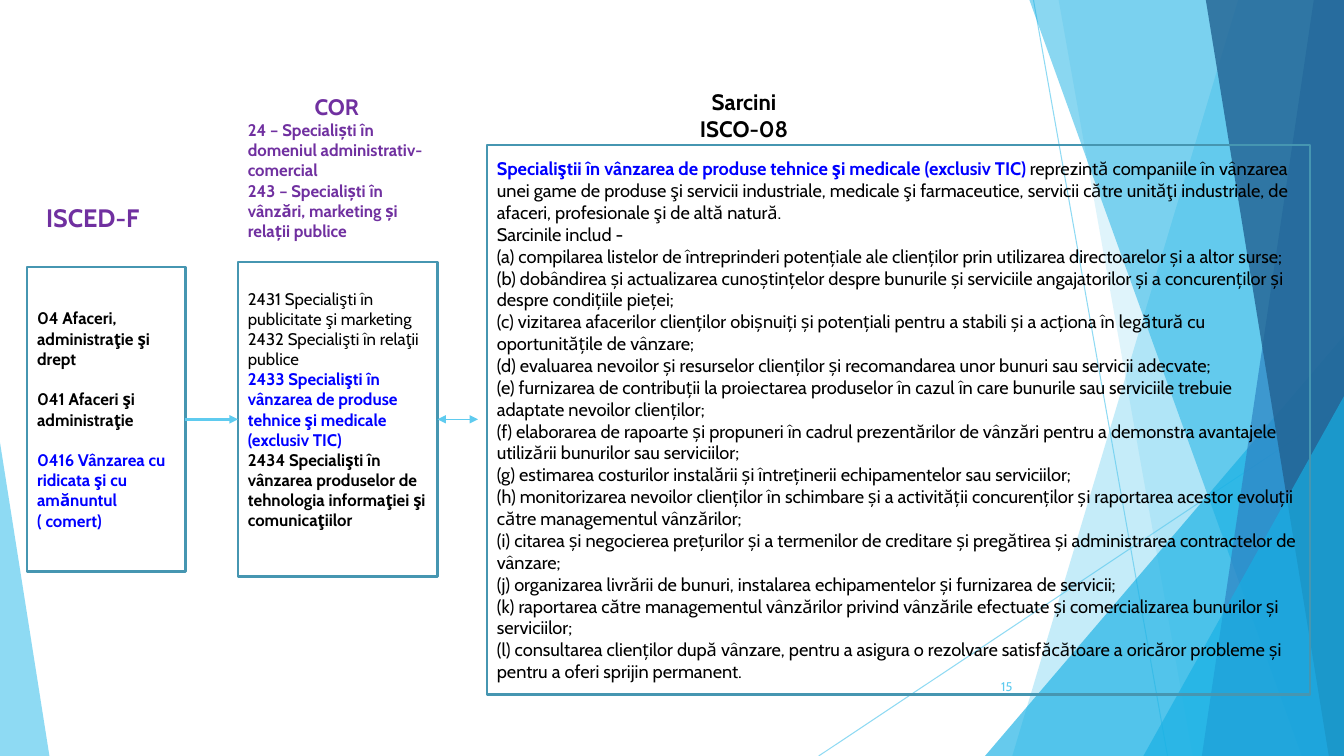
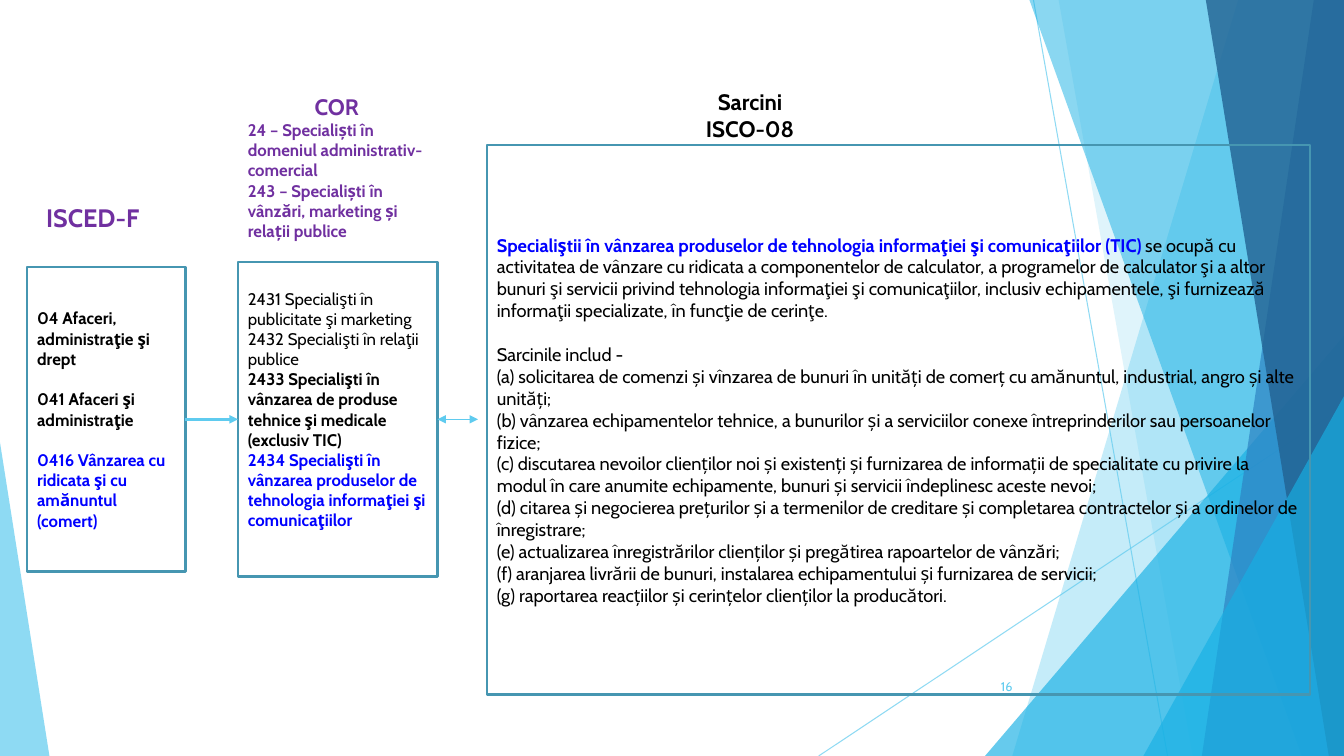
from dataclasses import dataclass

from lxml import etree
from pptx import Presentation
from pptx.dml import color
from pptx.enum import shapes, text
from pptx.oxml import ns
from pptx.util import Emu, Pt

PX = 9144  # EMU in one px: 100 px to the inch
WIDTH, HEIGHT = 1333, 750
FONT = "Cabin"
COLORS = {
    "white": "FFFFFF", "black": "000000", "highlight": "0000FF",
    "heading": "7030A0", "border": "4696B1", "sky": "5FCBEF",
    "azure": "17B0E4", "blue": "2E83C3", "navy": "226292",
}
CENTER, RIGHT = text.PP_ALIGN.CENTER, text.PP_ALIGN.RIGHT


@dataclass
class Run:
    words: str
    color: str = "black"
    bold: bool = False
    size: float = 12


@dataclass
class Paragraph:
    runs: list
    align: int = text.PP_ALIGN.LEFT
    gap: float = 0  # points before the paragraph


def line(words, color="black", bold=False, size=12, **layout):
    """A paragraph of one run."""
    return Paragraph([Run(words, color, bold, size)], **layout)


class Deck:
    def __init__(self):
        self.presentation = Presentation()
        self.presentation.slide_width = Emu(WIDTH * PX)
        self.presentation.slide_height = Emu(HEIGHT * PX)
        self.slide = None

    def new_slide(self):
        self.slide = self.presentation.slides.add_slide(self.presentation.slide_layouts[6])
        self.backdrop()

    def rgb(self, name):
        return color.RGBColor.from_string(COLORS[name])

    def set_alpha(self, paint, percent):
        """Make the solid colour under an XML element translucent."""
        srgb = paint.find(".//" + ns.qn("a:srgbClr"))
        etree.SubElement(srgb, ns.qn("a:alpha")).set("val", str(percent * 1000))

    def paint(self, shape, fill=None, border=None, alpha=100):
        shape.shadow.inherit = False
        if fill:
            shape.fill.solid()
            shape.fill.fore_color.rgb = self.rgb(fill)
            if alpha < 100:
                self.set_alpha(shape.element.spPr, alpha)
        else:
            shape.fill.background()
        if border:
            shape.line.color.rgb = self.rgb(border)
            shape.line.width = Pt(1.5)
        else:
            shape.line.fill.background()

    def band(self, top_x, bottom_x, fill, alpha):
        """A slanted band that reaches the right edge of the slide."""
        builder = self.slide.shapes.build_freeform(top_x, 0, PX)
        builder.add_line_segments([(WIDTH, 0), (WIDTH, HEIGHT), (bottom_x, HEIGHT)])
        self.paint(builder.convert_to_shape(), fill, alpha=alpha)

    def triangle(self, left, top, width, apex, fill, alpha):
        """A triangle that stands on the bottom edge of the slide."""
        shape = self.slide.shapes.add_shape(
            shapes.MSO_SHAPE.ISOSCELES_TRIANGLE,
            *(Emu(n * PX) for n in (left, top, width, HEIGHT - top)))
        shape.adjustments[0] = apex
        self.paint(shape, fill, alpha=alpha)

    def connector(self, start, end, width, alpha=100, arrows=()):
        connector = self.slide.shapes.add_connector(
            shapes.MSO_CONNECTOR.STRAIGHT, *(Emu(n * PX) for n in start + end))
        connector.line.color.rgb = self.rgb("sky")
        connector.line.width = Pt(width)
        outline = connector.element.spPr.find(ns.qn("a:ln"))
        if alpha < 100:
            self.set_alpha(outline, alpha)
        for arrow in arrows:
            etree.SubElement(outline, ns.qn("a:" + arrow)).set("type", "triangle")
        etree.SubElement(connector.element.spPr, ns.qn("a:effectLst"))
        return connector

    def set_text(self, shape, paragraphs, bottom=5):
        frame = shape.text_frame
        frame.word_wrap = True
        frame.vertical_anchor = text.MSO_ANCHOR.MIDDLE
        frame.margin_bottom = Emu(bottom * PX)
        for index, item in enumerate(paragraphs):
            paragraph = frame.add_paragraph() if index else frame.paragraphs[0]
            paragraph.alignment = item.align
            if item.gap:
                paragraph.space_before = Pt(item.gap)
            for part in item.runs:
                run = paragraph.add_run()
                run.text = part.words
                run.font.name = FONT
                run.font.size = Pt(part.size)
                run.font.bold = part.bold
                run.font.color.rgb = self.rgb(part.color)

    def box(self, left, top, width, height, paragraphs, fill=None, border=None, bottom=5):
        shape = self.slide.shapes.add_shape(
            shapes.MSO_SHAPE.RECTANGLE, *(Emu(n * PX) for n in (left, top, width, height)))
        self.paint(shape, fill, border)
        self.set_text(shape, paragraphs, bottom)
        return shape

    def label(self, left, top, width, height, paragraphs):
        shape = self.slide.shapes.add_textbox(*(Emu(n * PX) for n in (left, top, width, height)))
        self.set_text(shape, paragraphs)

    def backdrop(self):
        self.connector((1025, 0), (1158, HEIGHT), 0.75, 70)
        self.connector((WIDTH, 403), (812, HEIGHT), 0.75, 70)
        self.band(1228, 1004, "sky", 36)
        self.band(1050, 1183, "sky", 20)
        self.triangle(977, 333, 356, 1, "azure", 66)
        self.band(1021, 1291, "azure", 50)
        self.band(1303, 1192, "blue", 70)
        self.band(1196, 1318, "navy", 80)
        self.triangle(1134, 393, 199, 1, "azure", 66)
        self.triangle(0, 439, 49, 0, "sky", 70)

    def mapping(self, number, field, occupations, tasks, tasks_title_left):
        """One slide: field of education, occupations, tasks."""
        self.new_slide()
        self.label(939, 661, 75, 40, [line(str(number), "sky", size=9, align=RIGHT)])

        # Boxes
        field_box = self.box(27, 265, 157, 302, field, border="border")
        self.box(483, 144, 816, 545, tasks, border="border")
        occupation_box = self.box(236, 260, 198, 312, occupations, border="border", bottom=25)

        # Arrows
        arrow = self.connector((184, 416), (236, 416), 0, arrows=["tailEnd"])
        arrow.begin_connect(field_box, 3)
        arrow.end_connect(occupation_box, 1)
        arrow = self.connector((434, 416), (474, 416), 1, arrows=["headEnd", "tailEnd"])
        arrow.begin_connect(occupation_box, 3)

        # Headings
        self.label(27, 186, 130, 59, [line("ISCED-F", "heading", True, 18, align=CENTER)])
        self.label(tasks_title_left, 85, 196, 59, [
            line(words, bold=True, size=16, align=CENTER) for words in ("Sarcini", "ISCO-08")])
        self.box(236, 101, 196, 129, [
            line("COR", "heading", True, 16, align=CENTER),
            line("24 – Specialiști în domeniul administrativ-comercial", "heading", True),
            line("243 – Specialiști în vânzări, marketing și relații publice", "heading", True),
        ], fill="white")


def field_lines(*trade):
    """The path to the field; the trade lines stand out."""
    return [
        line("04 Afaceri, administraţie şi drept", bold=True),
        line("041 Afaceri şi administraţie", bold=True, gap=14.6),
        *(line(words, "highlight", True, gap=0 if index else 14.6)
          for index, words in enumerate(trade)),
    ]


def occupation_lines(chosen):
    groups = [
        "2431 Specialişti în publicitate şi marketing",
        "2432 Specialişti în relaţii publice",
        "2433 Specialişti în vânzarea de produse tehnice şi medicale (exclusiv TIC)",
        "2434 Specialişti în vânzarea produselor de tehnologia informaţiei şi comunicaţiilor",
    ]
    return [line(words, "highlight" if index == chosen else "black", bold=index >= 2)
            for index, words in enumerate(groups)]


def task_lines(occupation, summary, duties, gap=0):
    return [
        Paragraph([Run(occupation, "highlight", True, 13), Run(summary, size=13)]),
        line("Sarcinile includ -", size=13, gap=gap),
        *(line(f"({letter}) {duty}", size=13)
          for letter, duty in zip("abcdefghijkl", duties)),
    ]


TECHNICAL_DUTIES = [
    "compilarea listelor de întreprinderi potențiale ale clienților prin utilizarea directoarelor și a altor surse;",
    "dobândirea și actualizarea cunoștințelor despre bunurile și serviciile angajatorilor și a concurenților și despre condițiile pieței;",
    "vizitarea afacerilor clienților obișnuiți și potențiali pentru a stabili și a acționa în legătură cu oportunitățile de vânzare;",
    "evaluarea nevoilor și resurselor clienților și recomandarea unor bunuri sau servicii adecvate;",
    "furnizarea de contribuții la proiectarea produselor în cazul în care bunurile sau serviciile trebuie adaptate nevoilor clienților;",
    "elaborarea de rapoarte și propuneri în cadrul prezentărilor de vânzări pentru a demonstra avantajele utilizării bunurilor sau serviciilor;",
    "estimarea costurilor instalării și întreținerii echipamentelor sau serviciilor;",
    "monitorizarea nevoilor clienților în schimbare și a activității concurenților și raportarea acestor evoluții către managementul vânzărilor;",
    "citarea și negocierea prețurilor și a termenilor de creditare și pregătirea și administrarea contractelor de vânzare;",
    "organizarea livrării de bunuri, instalarea echipamentelor și furnizarea de servicii;",
    "raportarea către managementul vânzărilor privind vânzările efectuate și comercializarea bunurilor și serviciilor;",
    "consultarea clienților după vânzare, pentru a asigura o rezolvare satisfăcătoare a oricăror probleme și pentru a oferi sprijin permanent.",
]
ICT_DUTIES = [
    "solicitarea de comenzi și vînzarea de bunuri în unități de comerț cu amănuntul, industrial, angro și alte unități;",
    "vânzarea echipamentelor tehnice, a bunurilor și a serviciilor conexe întreprinderilor sau persoanelor fizice;",
    "discutarea nevoilor clienților noi și existenți și furnizarea de informații de specialitate cu privire la modul în care anumite echipamente, bunuri și servicii îndeplinesc aceste nevoi;",
    "citarea și negocierea prețurilor și a termenilor de creditare și completarea contractelor și a ordinelor de înregistrare;",
    "actualizarea înregistrărilor clienților și pregătirea rapoartelor de vânzări;",
    "aranjarea livrării de bunuri, instalarea echipamentului și furnizarea de servicii;",
    "raportarea reacțiilor și cerințelor clienților la producători.",
]


def main():
    deck = Deck()

    # Technical and medical sales
    deck.mapping(
        15,
        field_lines("0416 Vânzarea cu ridicata şi cu amănuntul", "( comert)"),
        occupation_lines(2),
        task_lines(
            "Specialiştii în vânzarea de produse tehnice şi medicale (exclusiv TIC) ",
            "reprezintă companiile în vânzarea unei game de produse şi servicii industriale, medicale şi farmaceutice, servicii către unităţi industriale, de afaceri, profesionale şi de altă natură.",
            TECHNICAL_DUTIES),
        tasks_title_left=640)

    # Information technology sales
    deck.mapping(
        16,
        field_lines("0416 Vânzarea cu ridicata şi cu amănuntul (comert)"),
        occupation_lines(3),
        task_lines(
            "Specialiştii în vânzarea produselor de tehnologia informaţiei şi comunicaţiilor (TIC) ",
            "se ocupă cu activitatea de vânzare cu ridicata a componentelor de calculator, a programelor de calculator şi a altor bunuri şi servicii privind tehnologia informaţiei şi comunicaţiilor, inclusiv echipamentele, şi furnizează informaţii specializate, în funcţie de cerinţe.",
            ICT_DUTIES, gap=15.8),
        tasks_title_left=646)

    deck.presentation.save("out.pptx")


if __name__ == "__main__":
    main()
